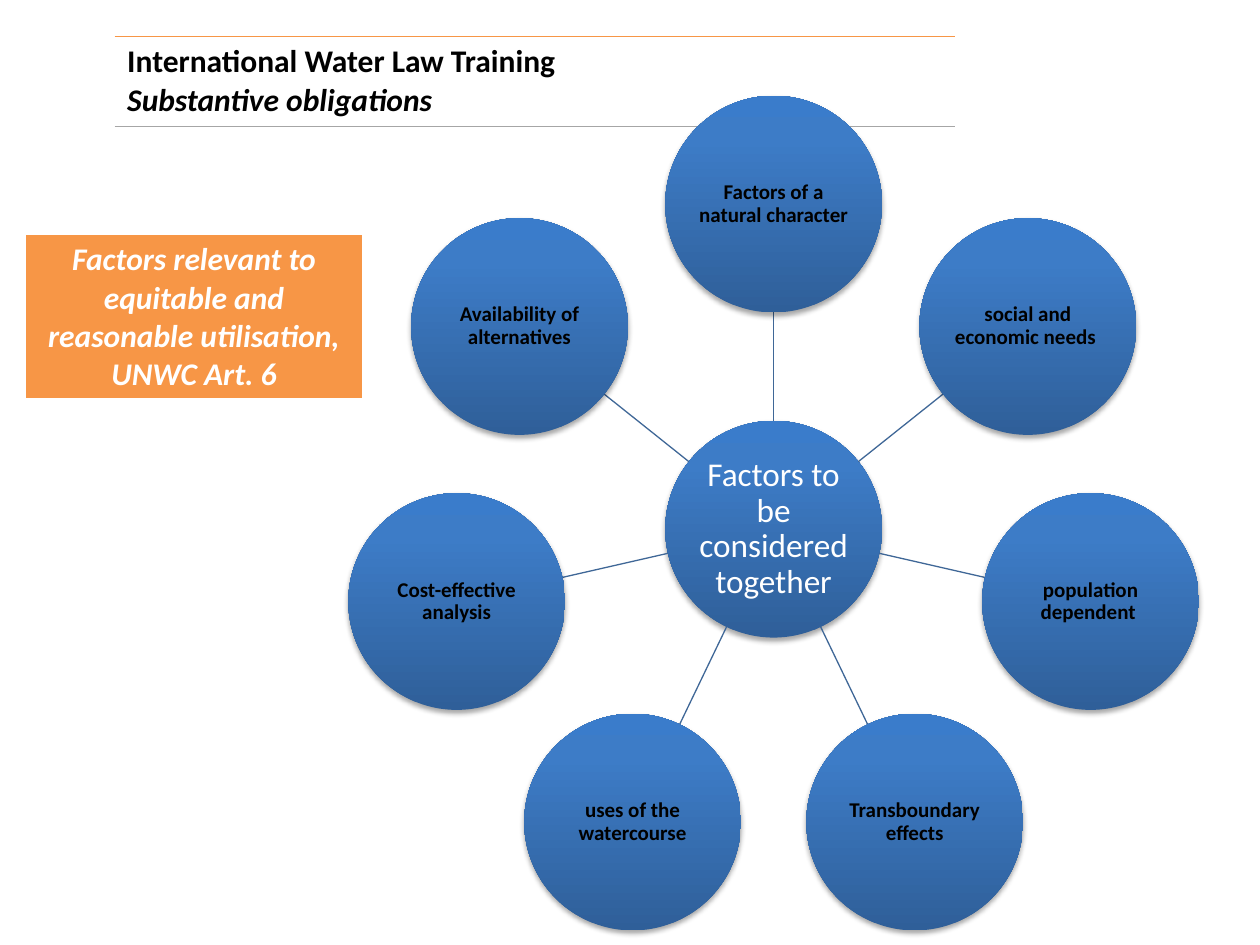
from math import cos, pi, sin

from pptx import Presentation
from pptx.dml.color import RGBColor
from pptx.enum.shapes import MSO_CONNECTOR as Connector, MSO_SHAPE as Shape
from pptx.enum.text import MSO_ANCHOR as Anchor, PP_ALIGN as Align
from pptx.oxml import parse_xml
from pptx.oxml.ns import nsdecls, qn
from pptx.oxml.xmlchemy import OxmlElement
from pptx.util import Inches, Pt

BLACK = RGBColor(0x00, 0x00, 0x00)
WHITE = RGBColor(0xFF, 0xFF, 0xFF)
ORANGE = RGBColor(0xF7, 0x96, 0x46)
GREY = RGBColor(0xA6, 0xA6, 0xA6)
SPOKE = RGBColor(0x3F, 0x67, 0x97)
DEEP_BLUE = RGBColor(0x2F, 0x5F, 0x99)
MID_BLUE = RGBColor(0x3D, 0x7C, 0xC7)
LIGHT_BLUE = RGBColor(0x3A, 0x7C, 0xCB)

CENTER_X, CENTER_Y = 6.14, 4.2
RADIUS, ORBIT = 0.86, 2.58
FACTORS = [
    "Factors of a natural\u00a0character",
    "social and economic needs ",
    "population dependent ",
    "Transboundary effects",
    "uses of the watercourse",
    "Cost-effective analysis",
    "Availability of alternatives",
]


class FactorSlide:
    """Draws the tables, circles and spokes of one slide in a shared style."""

    font_name = "Calibri"
    gradient = [(0, DEEP_BLUE), (80, MID_BLUE), (100, LIGHT_BLUE)]

    def __init__(self, presentation):
        self.slide = presentation.slides.add_slide(presentation.slide_layouts[6])

    def add_run(self, paragraph, text, size, color, bold=False, italic=False):
        run = paragraph.add_run()
        run.text = text
        font = run.font
        font.name, font.size = self.font_name, Pt(size)
        font.bold, font.italic = bold, italic
        font.color.rgb = color

    def add_border(self, cell, side, color, width):
        line = OxmlElement(f"a:ln{side}")
        if color is None:
            line.set("w", "0")
            line.append(OxmlElement("a:noFill"))
        else:
            line.set("w", str(Pt(width)))
            line.append(parse_xml(
                f'<a:solidFill {nsdecls("a")}><a:srgbClr val="{color}"/></a:solidFill>'))
        cell._tc.get_or_add_tcPr().append(line)

    def add_box(self, bounds, lines, color, borders, align, fill=None):
        table = self.slide.shapes.add_table(1, 1, *map(Inches, bounds)).table
        table.first_row = table.horz_banding = False
        cell = table.cell(0, 0)
        for side, (border_color, width) in zip("LRTB", borders):
            self.add_border(cell, side, border_color, width)
        if fill is None:
            cell.fill.background()
        else:
            cell.fill.solid()
            cell.fill.fore_color.rgb = fill
        frame = cell.text_frame
        for index, (text, italic) in enumerate(lines):
            paragraph = frame.add_paragraph() if index else frame.paragraphs[0]
            paragraph.alignment = align
            self.add_run(paragraph, text, 18, color, True, italic)

    def add_circle(self, x, y, text, size, color, bold=False):
        shape = self.slide.shapes.add_shape(
            Shape.OVAL, Inches(x - RADIUS), Inches(y - RADIUS),
            Inches(2 * RADIUS), Inches(2 * RADIUS))
        shape.line.fill.background()
        shape.fill.gradient()
        shape.fill.gradient_angle = 90
        properties = shape._element.spPr
        stops = properties.find(".//" + qn("a:gsLst"))
        stops[:] = [parse_xml(
            f'<a:gs {nsdecls("a")} pos="{position * 1000}"><a:srgbClr val="{stop}"/></a:gs>')
            for position, stop in self.gradient]
        shape.shadow.inherit = False
        properties.find(qn("a:effectLst")).append(parse_xml(
            f'<a:outerShdw {nsdecls("a")} blurRad="{Pt(3.1)}" dist="{Pt(1.8)}" dir="5400000" '
            'rotWithShape="0"><a:srgbClr val="000000"><a:alpha val="35000"/></a:srgbClr>'
            '</a:outerShdw>'))
        frame = shape.text_frame
        frame.word_wrap = True
        frame.vertical_anchor = Anchor.MIDDLE
        frame.margin_left = frame.margin_right = Inches(0.01)
        frame.margin_top = frame.margin_bottom = Inches(0.01)
        paragraph = frame.paragraphs[0]
        paragraph.alignment = Align.CENTER
        paragraph.line_spacing = 0.9
        self.add_run(paragraph, text, size, color, bold)

    def add_spoke(self, across, up):
        inner, outer = RADIUS, ORBIT - RADIUS
        ends = [Inches(value) for distance in (inner, outer) for value in
                (CENTER_X + distance * across, CENTER_Y - distance * up)]
        connector = self.slide.shapes.add_connector(Connector.STRAIGHT, *ends)
        connector.line.color.rgb = SPOKE
        connector.line.width = Pt(0.75)
        connector._element.spPr.append(OxmlElement("a:effectLst"))


def main():
    presentation = Presentation()
    presentation.slide_width, presentation.slide_height = Inches(10), Inches(7.5)
    page = FactorSlide(presentation)
    page.add_box(
        (0.91, 0.29, 6.67, 0.7),
        [("International Water Law Training", False), ("Substantive obligations", True)],
        BLACK, [(None, 0), (None, 0), (ORANGE, 1), (GREY, 0.5)], Align.LEFT)
    page.add_box(
        (0.2, 1.86, 2.68, 1.3),
        [("Factors relevant to equitable and reasonable utilisation, UNWC Art. 6", True)],
        WHITE, [(WHITE, 1), (WHITE, 1), (WHITE, 1), (WHITE, 3)], Align.CENTER, ORANGE)
    page.add_circle(CENTER_X, CENTER_Y, "Factors to be considered together", 19, WHITE)
    for index, factor in enumerate(FACTORS):
        angle = 2 * pi * index / len(FACTORS)
        across, up = sin(angle), cos(angle)
        page.add_spoke(across, up)
        page.add_circle(CENTER_X + ORBIT * across, CENTER_Y - ORBIT * up,
                        factor, 12, BLACK, True)
    presentation.save("out.pptx")


if __name__ == "__main__":
    main()
